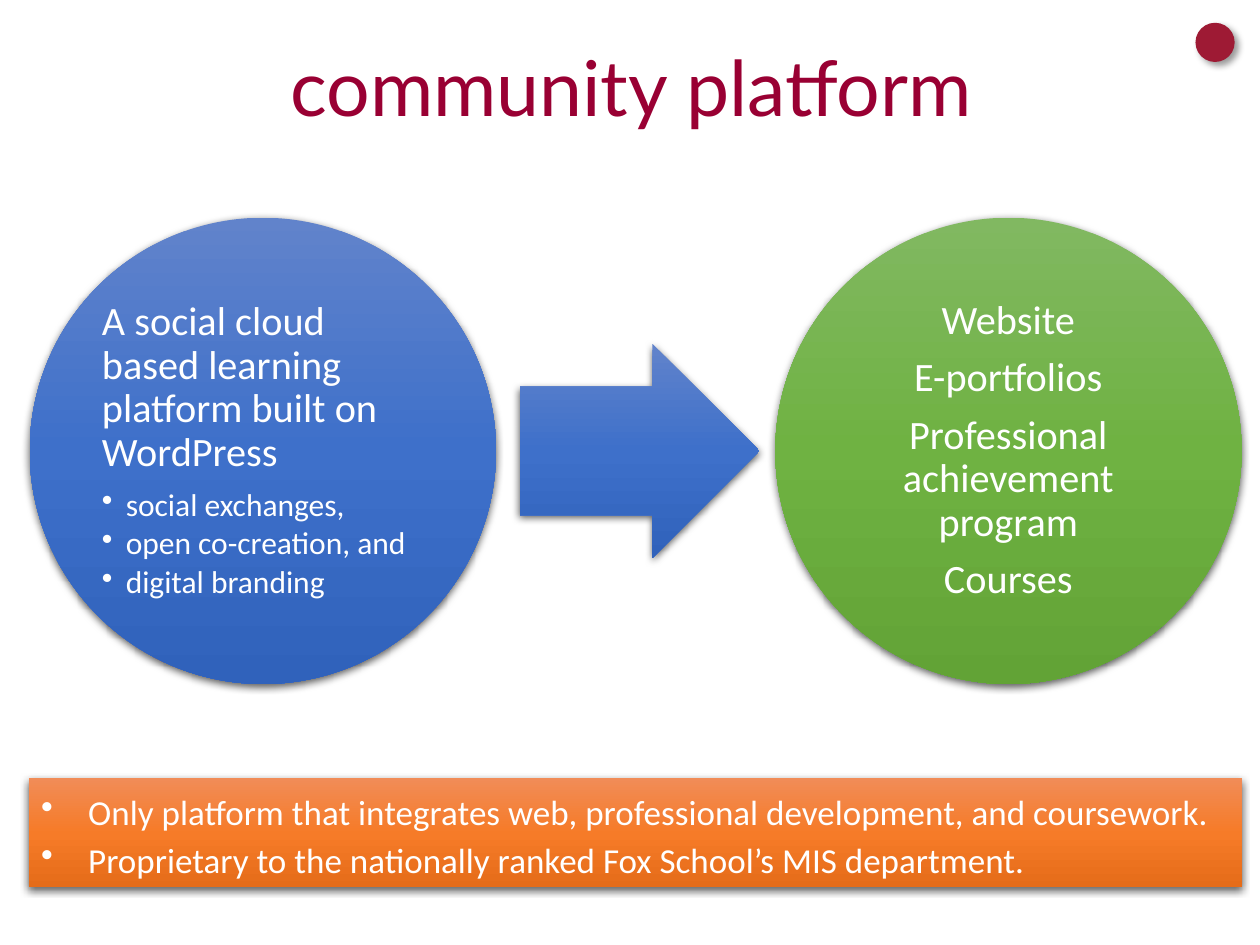
"""Build the community platform slide: inputs, arrow, outcomes and a takeaway bar."""
from copy import deepcopy
from dataclasses import dataclass

from lxml import etree
from pptx import Presentation
from pptx.dml.color import RGBColor
from pptx.enum.shapes import MSO_SHAPE
from pptx.enum.text import MSO_ANCHOR, PP_ALIGN
from pptx.oxml.ns import qn
from pptx.util import Cm, Pt

OVAL, ARROW, BAR = MSO_SHAPE.OVAL, MSO_SHAPE.RIGHT_ARROW, MSO_SHAPE.RECTANGLE
LEFT, CENTER = PP_ALIGN.LEFT, PP_ALIGN.CENTER
TOP, MIDDLE = MSO_ANCHOR.TOP, MSO_ANCHOR.MIDDLE

COLORS = {"title": "990033", "text": "FFFFFF", "dot": "9E1A34", "shadow": "000000"}
GRADIENTS = {
    "blue": ("6183CB", "3E70CA", "3062BB"),
    "green": ("81B861", "6FB242", "62A336"),
    "orange": ("F18C57", "F67B28", "E56C19"),
}


@dataclass(frozen=True)
class Shadow:
    opacity: int
    blur: float
    distance: float
    angle: int


@dataclass(frozen=True)
class Line:
    text: str
    size: int
    align: PP_ALIGN = LEFT
    spacing: float = 0.9
    after: float = 0
    indent: float = 0


@dataclass(frozen=True)
class Panel:
    kind: MSO_SHAPE
    left: float
    top: float
    width: float
    height: float
    gradient: str
    lines: tuple[Line, ...] = ()
    inset: float = 0.08
    anchor: MSO_ANCHOR = MIDDLE


PANEL_SHADOW = Shadow(63, 4.5, 1.5, 90)
DOT_SHADOW = Shadow(40, 4, 3, 45)

DIAMETER, CIRCLE_TOP = 9.4, 4.39
ARROW_HEIGHT = 4.32

platform_lines = (
    Line("A social cloud based learning platform built on WordPress", 23, after=8),
    *(Line(feature, 18, after=2.7, indent=0.48)
      for feature in ("social exchanges,", "open co-creation, and", "digital branding")),
)
outcome_lines = tuple(
    Line(outcome, 23, CENTER, after=8)
    for outcome in ("Website", "E-portfolios", "Professional achievement program", "Courses")
)
takeaway_lines = tuple(
    Line(takeaway, 20, spacing=1.14, indent=0.95)
    for takeaway in (
        "Only platform that integrates web, professional development, and coursework.",
        "Proprietary to the nationally ranked Fox School’s MIS department.",
    )
)
PANELS = (
    Panel(OVAL, 0.6, CIRCLE_TOP, DIAMETER, DIAMETER, "blue", platform_lines),
    Panel(ARROW, 10.48, CIRCLE_TOP + (DIAMETER - ARROW_HEIGHT) / 2, 4.83, ARROW_HEIGHT, "blue"),
    Panel(OVAL, 15.63, CIRCLE_TOP, DIAMETER, DIAMETER, "green", outcome_lines),
    Panel(BAR, 0.58, 15.69, 24.46, 2.2, "orange", takeaway_lines, 0.25, TOP),
)


def rgb(value: str) -> RGBColor:
    return RGBColor.from_string(value)


def add_shadow(shape, shadow: Shadow) -> None:
    shape.shadow.inherit = False
    effects = shape._element.spPr.find(qn("a:effectLst"))
    outer = etree.SubElement(
        effects, qn("a:outerShdw"), blurRad=str(Pt(shadow.blur)),
        dist=str(Pt(shadow.distance)), dir=str(shadow.angle * 60000),
        algn="ctr", rotWithShape="0")
    color = etree.SubElement(outer, qn("a:srgbClr"), val=COLORS["shadow"])
    etree.SubElement(color, qn("a:alpha"), val=str(shadow.opacity * 1000))


def fill_gradient(shape, colors: tuple[str, ...]) -> None:
    shape.fill.gradient()
    shape.fill.gradient_angle = 270
    stop_list = shape._element.spPr.find(".//" + qn("a:gsLst"))
    stop_list.insert(1, deepcopy(stop_list[0]))
    for index, (stop, color) in enumerate(zip(shape.fill.gradient_stops, colors)):
        stop.position = index / (len(colors) - 1)
        stop.color.rgb = rgb(color)


def write_line(paragraph, line: Line) -> None:
    paragraph.text = line.text
    if line.indent:
        properties = paragraph._p.get_or_add_pPr()
        properties.set("marL", str(Cm(line.indent)))
        properties.set("indent", str(-Cm(line.indent)))
        etree.SubElement(properties, qn("a:buChar"), char="•")
    paragraph.alignment = line.align
    paragraph.line_spacing = line.spacing
    paragraph.space_after = Pt(line.after)
    paragraph.font.size = Pt(line.size)
    paragraph.font.name = "Calibri"
    paragraph.font.color.rgb = rgb(COLORS["text"])


def draw_panel(slide, panel: Panel) -> None:
    shape = slide.shapes.add_shape(
        panel.kind, Cm(panel.left), Cm(panel.top), Cm(panel.width), Cm(panel.height))
    if panel.kind == ARROW:
        shape.adjustments[0] = 0.6
    fill_gradient(shape, GRADIENTS[panel.gradient])
    shape.line.fill.background()
    add_shadow(shape, PANEL_SHADOW)
    if not panel.lines:
        return
    frame = shape.text_frame
    frame.word_wrap = True
    frame.vertical_anchor = panel.anchor
    frame.margin_left = frame.margin_right = Cm(panel.inset)
    frame.margin_top = frame.margin_bottom = Cm(min(panel.inset, 0.13))
    for index, line in enumerate(panel.lines):
        write_line(frame.add_paragraph() if index else frame.paragraphs[0], line)


def draw_title(slide, text: str) -> None:
    title = slide.shapes.title
    title.left, title.top, title.width, title.height = Cm(1.78), Cm(0.46), Cm(21.9), Cm(2.79)
    title.text_frame.text = text
    title.text_frame.vertical_anchor = MIDDLE
    heading = title.text_frame.paragraphs[0]
    heading.alignment = CENTER
    heading.line_spacing = 0.9
    heading.font.size = Pt(44)
    heading.font.name = "Lato"
    heading.font.color.rgb = rgb(COLORS["title"])


def draw_dot(slide) -> None:
    dot = slide.shapes.add_shape(OVAL, Cm(24.1), Cm(0.46), Cm(0.79), Cm(0.79))
    dot.fill.solid()
    dot.fill.fore_color.rgb = rgb(COLORS["dot"])
    dot.line.fill.background()
    add_shadow(dot, DOT_SHADOW)


def main() -> None:
    presentation = Presentation()
    presentation.slide_width, presentation.slide_height = Cm(25.4), Cm(19.05)
    slide = presentation.slides.add_slide(presentation.slide_layouts[5])
    draw_title(slide, "community platform")
    for panel in PANELS:
        draw_panel(slide, panel)
    draw_dot(slide)
    presentation.save("out.pptx")


if __name__ == "__main__":
    main()
